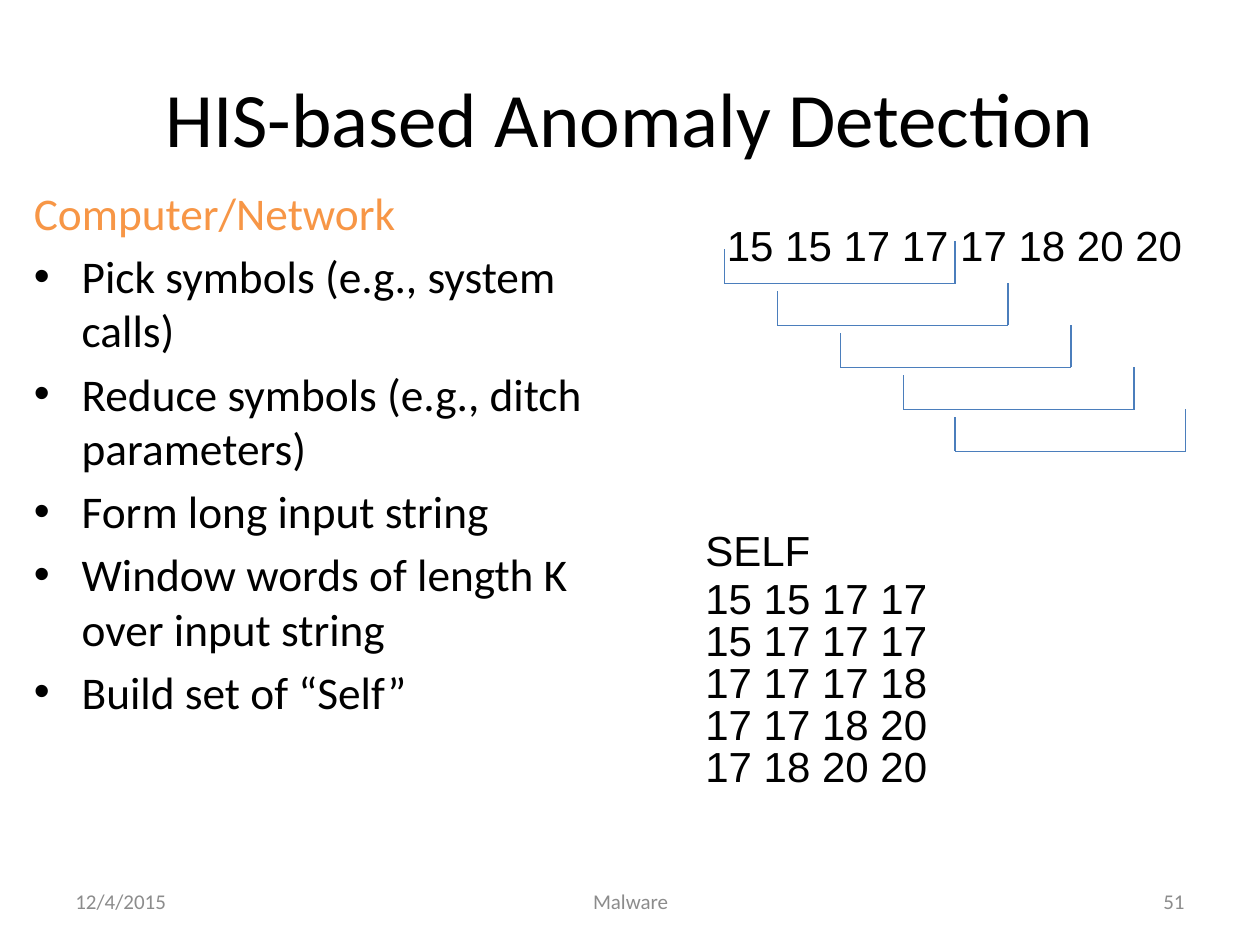
from lxml import etree
from pptx import Presentation
from pptx.dml.color import RGBColor
from pptx.enum.shapes import MSO_CONNECTOR as CONN
from pptx.enum.text import MSO_ANCHOR as ANCHOR, MSO_AUTO_SIZE as FIT, PP_ALIGN as ALIGN
from pptx.oxml.ns import qn
from pptx.util import Inches, Pt

SYMBOLS = "15 15 17 17 17 18 20 20".split()
WORD_LENGTH = 4
WINDOW_LEFTS = [5.75, 6.17, 6.67, 7.17, 7.58]
STEPS = [
    "Pick symbols (e.g., system calls)",
    "Reduce symbols (e.g., ditch parameters)",
    "Form long input string",
    "Window words of length K over input string",
    "Build set of “Self”",
]


def rgb(color):
    return RGBColor.from_string(color)


class Deck:
    font, number_font = "Calibri", "Arial"
    black, orange, grey, blue = "000000", "F79646", "8C8C8C", "4B7EBC"

    def __init__(self, width, height):
        self.prs = Presentation()
        self.prs.slide_width, self.prs.slide_height = Inches(width), Inches(height)
        self.s = self.prs.slides.add_slide(self.prs.slide_layouts[6])

    def box(self, left, top, width, height, anchor=ANCHOR.TOP):
        sp = self.s.shapes.add_textbox(*map(Inches, (left, top, width, height)))
        tf = sp.text_frame
        tf.word_wrap = True
        tf.vertical_anchor = anchor
        return tf

    def run(self, p, text, size, color, font):
        r = p.add_run()
        r.text = text
        r.font.size, r.font.name = Pt(size), font
        r.font.color.rgb = rgb(color)

    def label(self, text, at, size, color, align):
        p = self.box(*at, anchor=ANCHOR.MIDDLE).paragraphs[0]
        p.alignment = align
        self.run(p, text, size, color, self.font)

    def numbers(self, text, left, top, width):
        tf = self.box(left, top, width, 0.45)
        tf.auto_size = FIT.SHAPE_TO_FIT_TEXT
        p = tf.paragraphs[0]
        p.line_spacing = 0.87
        self.run(p, text, 24, self.black, self.number_font)

    def bullets(self, heading, items, at):
        tf = self.box(*at)
        for i, text in enumerate([heading, *items]):
            p = tf.add_paragraph() if i else tf.paragraphs[0]
            p.space_before = Pt(5)
            pPr = p._p.get_or_add_pPr()
            pPr.set("marL", str(Inches(0.38)))
            pPr.set("indent", str(Inches(-0.38)))
            if i:
                etree.SubElement(pPr, qn("a:buFont")).set("typeface", "Arial")
                etree.SubElement(pPr, qn("a:buChar")).set("char", "•")
            else:
                etree.SubElement(pPr, qn("a:buNone"))
            self.run(p, text, 25.9, self.black if i else self.orange, self.font)

    def line(self, shapes, x1, y1, x2, y2):
        ln = shapes.add_connector(CONN.STRAIGHT, *map(Inches, (x1, y1, x2, y2)))
        ln.line.color.rgb = rgb(self.blue)
        ln.line.width = Pt(0.75)
        etree.SubElement(ln._element.spPr, qn("a:effectLst"))

    def bracket(self, left, bottom, width):
        """Group three lines that mark one window of the input string."""
        shapes = self.s.shapes.add_group_shape().shapes
        right = left + width
        self.line(shapes, left, bottom - 0.27, left, bottom)
        self.line(shapes, right, bottom, right, bottom - 0.335)
        self.line(shapes, right, bottom, left, bottom)


def main():
    deck = Deck(10, 7.5)
    deck.label("HIS-based Anomaly Detection", (0.5, 0.3, 9, 1.25), 44, deck.black, ALIGN.CENTER)
    for text, left, width, align in [
        ("12/4/2015", 0.5, 2.33, ALIGN.LEFT),
        ("Malware", 3.42, 3.17, ALIGN.CENTER),
        ("51", 7.17, 2.33, ALIGN.RIGHT),
    ]:
        deck.label(text, (left, 6.95, width, 0.4), 12, deck.grey, align)

    deck.bullets("Computer/Network", STEPS, (0.17, 1.42, 4.67, 4.67))

    deck.numbers(" ".join(SYMBOLS), 5.67, 1.75, 4.08)
    deck.numbers("SELF", 5.5, 4.17, 2.21)
    for i, left in enumerate(WINDOW_LEFTS):
        deck.bracket(left, 2.25 + i / 3, 1.83)
        deck.numbers(" ".join(SYMBOLS[i:i + WORD_LENGTH]), 5.5, 4.55 + i / 3, 2.21)

    deck.prs.save("out.pptx")


if __name__ == "__main__":
    main()
